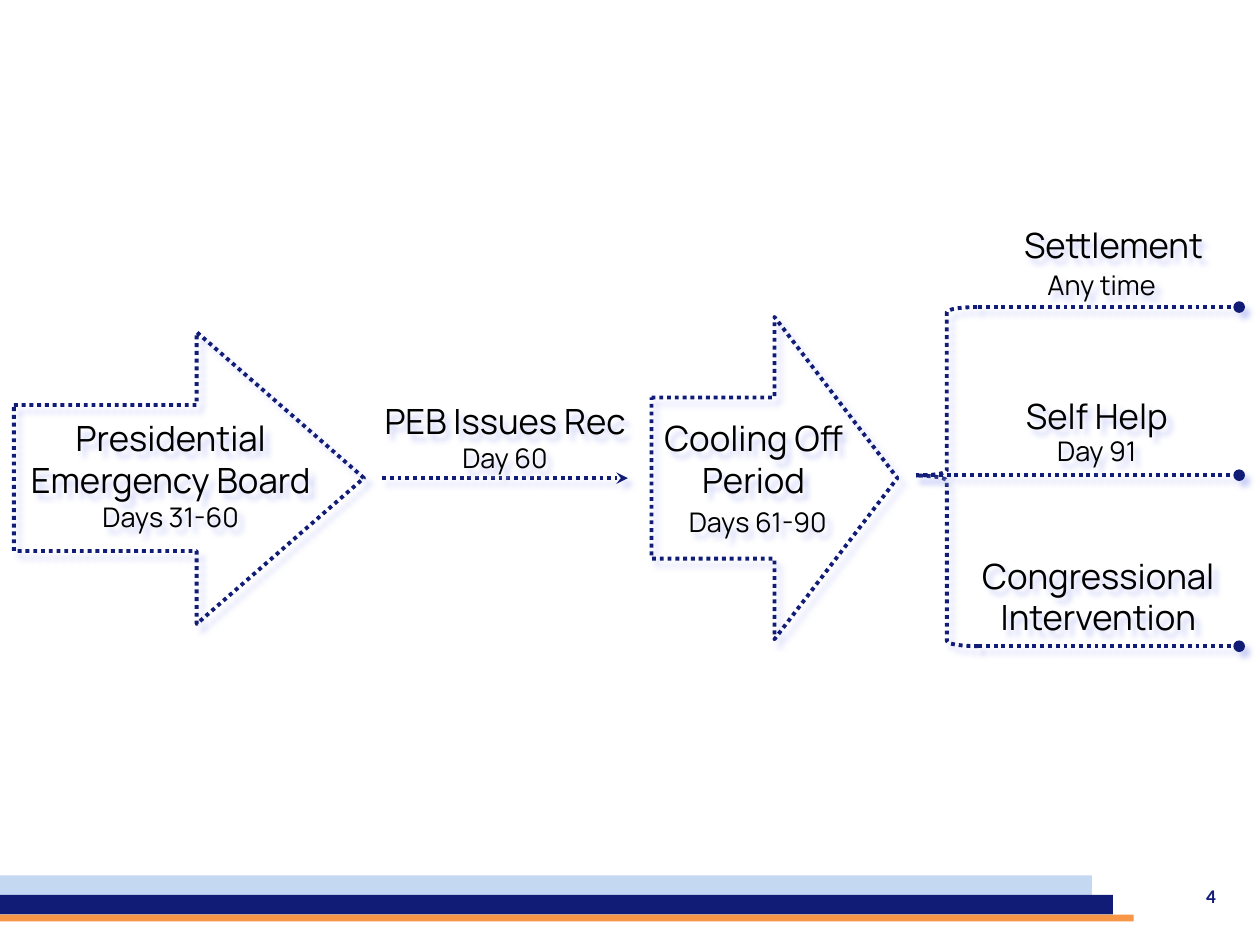
from dataclasses import dataclass

import pptx
import pptx.dml.color
import pptx.enum.dml
import pptx.enum.shapes
import pptx.enum.text
import pptx.oxml
import pptx.oxml.ns
import pptx.presentation
import pptx.slide
import pptx.util

Pt = pptx.util.Pt
Kind = pptx.enum.shapes.MSO_SHAPE
Align = pptx.enum.text.PP_ALIGN

COLORS = {
    "navy": "101C76",
    "sky": "C5D8F1",
    "orange": "F79646",
    "shadow": "CCD1F8",
    "text": "000000",
}
HEADING, DETAIL = 18, 14


@dataclass(frozen=True)
class Band:
    top: float
    width: float
    height: float
    color: str


@dataclass(frozen=True)
class Outline:
    kind: Kind
    left: float
    top: float
    width: float
    height: float
    adjustments: tuple[float, float]


@dataclass(frozen=True)
class Timeline:
    start: float
    end: float
    y: float
    tip: str


@dataclass(frozen=True)
class Label:
    left: float
    top: float
    width: float
    height: float
    lines: tuple[tuple[str, int], ...]
    wrap: bool = False


BANDS = [
    Band(453.6, 565.9, 10.1, "sky"),
    Band(463.7, 576.7, 10.1, "navy"),
    Band(473.8, 587.5, 3.6, "orange"),
]

OUTLINES = [
    Outline(Kind.RIGHT_ARROW, 7.2, 172.1, 181.4, 151.2, (0.5, 0.573)),
    Outline(Kind.RIGHT_ARROW, 337.7, 164.2, 127.4, 167, (0.5, 0.5)),
    Outline(Kind.LEFT_BRACE, 474.5, 159.1, 32.4, 175.7, (0.083, 0.497)),
]

TIMELINES = [
    Timeline(198, 325.4, 247.7, "stealth"),
    Timeline(506.9, 642.2, 159.1, "oval"),
    Timeline(474.5, 642.2, 246.2, "oval"),
    Timeline(506.9, 642.2, 334.8, "oval"),
]

LABELS = [
    Label(-5.8, 212.4, 188.6, 70.6,
          (("Presidential Emergency Board", HEADING), ("Days 31-60", DETAIL)), True),
    Label(190.1, 203.8, 143.3, 46.1,
          (("PEB Issues Rec", HEADING), ("Day 60", DETAIL)), True),
    Label(334.8, 212.4, 111.5, 51.1, (("Cooling Off", HEADING), ("Period", HEADING))),
    Label(348.5, 258.5, 88.6, 24.5, (("Days 61-90", DETAIL),)),
    Label(522, 112.3, 110.2, 28.8, (("Settlement", HEADING),)),
    Label(534.2, 135.4, 73.4, 24.5, (("Any time", DETAIL),)),
    Label(522, 200.9, 92.9, 28.8, (("Self Help", HEADING),)),
    Label(539.3, 221.8, 58.3, 24.5, (("Day 91", DETAIL),)),
    Label(499, 283.7, 140.4, 51.1,
          (("Congressional", HEADING), ("Intervention", HEADING))),
]


def rgb(name: str) -> pptx.dml.color.RGBColor:
    return pptx.dml.color.RGBColor.from_string(COLORS[name])


def add_shadow(item) -> None:
    """Give a shape, text box or connector the soft lower-right shadow."""
    item._element.spPr.append(pptx.oxml.parse_xml(
        f'<a:effectLst {pptx.oxml.ns.nsdecls("a")}>'
        f'<a:outerShdw blurRad="{Pt(3)}" dist="{Pt(4)}" dir="{50 * 60000}" '
        'algn="tl" rotWithShape="0">'
        f'<a:srgbClr val="{COLORS["shadow"]}"/></a:outerShdw></a:effectLst>'))


def dot_line(item) -> None:
    item.line.color.rgb = rgb("navy")
    item.line.width = Pt(2)
    item.line.dash_style = pptx.enum.dml.MSO_LINE.ROUND_DOT


def add_band(page: pptx.slide.Slide, band: Band) -> None:
    shape = page.shapes.add_shape(
        Kind.RECTANGLE, 0, Pt(band.top), Pt(band.width), Pt(band.height))
    shape.shadow.inherit = False
    shape.fill.solid()
    shape.fill.fore_color.rgb = rgb(band.color)
    shape.line.fill.background()


def add_outline(page: pptx.slide.Slide, outline: Outline) -> None:
    shape = page.shapes.add_shape(
        outline.kind, Pt(outline.left), Pt(outline.top),
        Pt(outline.width), Pt(outline.height))
    for index, value in enumerate(outline.adjustments):
        shape.adjustments[index] = value
    shape.fill.background()
    dot_line(shape)
    add_shadow(shape)


def add_timeline(page: pptx.slide.Slide, timeline: Timeline) -> None:
    connector = page.shapes.add_connector(
        pptx.enum.shapes.MSO_CONNECTOR.STRAIGHT,
        Pt(timeline.start), Pt(timeline.y), Pt(timeline.end), Pt(timeline.y))
    dot_line(connector)
    connector.line._get_or_add_ln().append(pptx.oxml.parse_xml(
        f'<a:tailEnd {pptx.oxml.ns.nsdecls("a")} type="{timeline.tip}"/>'))
    add_shadow(connector)


def add_label(page: pptx.slide.Slide, label: Label) -> None:
    box = page.shapes.add_textbox(
        Pt(label.left), Pt(label.top), Pt(label.width), Pt(label.height))
    frame = box.text_frame
    frame.word_wrap = label.wrap
    frame.text = "\n".join(text for text, size in label.lines)
    for para, (text, size) in zip(frame.paragraphs, label.lines):
        para.alignment = Align.CENTER
        for span in para.runs:
            span.font.name = "Manrope"
            span.font.size = Pt(size)
            span.font.color.rgb = rgb("text")
    add_shadow(box)


def add_page_number(page: pptx.slide.Slide, number: str) -> None:
    box = page.shapes.add_textbox(Pt(484.6), Pt(451.4), Pt(152.6), Pt(25.9))
    frame = box.text_frame
    frame.word_wrap = True
    frame.vertical_anchor = pptx.enum.text.MSO_ANCHOR.MIDDLE
    frame.text = number
    para = frame.paragraphs[0]
    para.alignment = Align.RIGHT
    font = para.runs[0].font
    font.name, font.size, font.bold = "Calibri", Pt(10), True
    font.color.rgb = rgb("navy")


def main() -> None:
    deck = pptx.Presentation()
    deck.slide_width, deck.slide_height = Pt(653), Pt(489.6)
    page = deck.slides.add_slide(deck.slide_layouts[6])

    # Footer
    for band in BANDS:
        add_band(page, band)
    add_page_number(page, "4")

    # Process stages and outcomes
    for outline in OUTLINES:
        add_outline(page, outline)
    for timeline in TIMELINES:
        add_timeline(page, timeline)
    for label in LABELS:
        add_label(page, label)

    deck.save("out.pptx")


if __name__ == "__main__":
    main()
